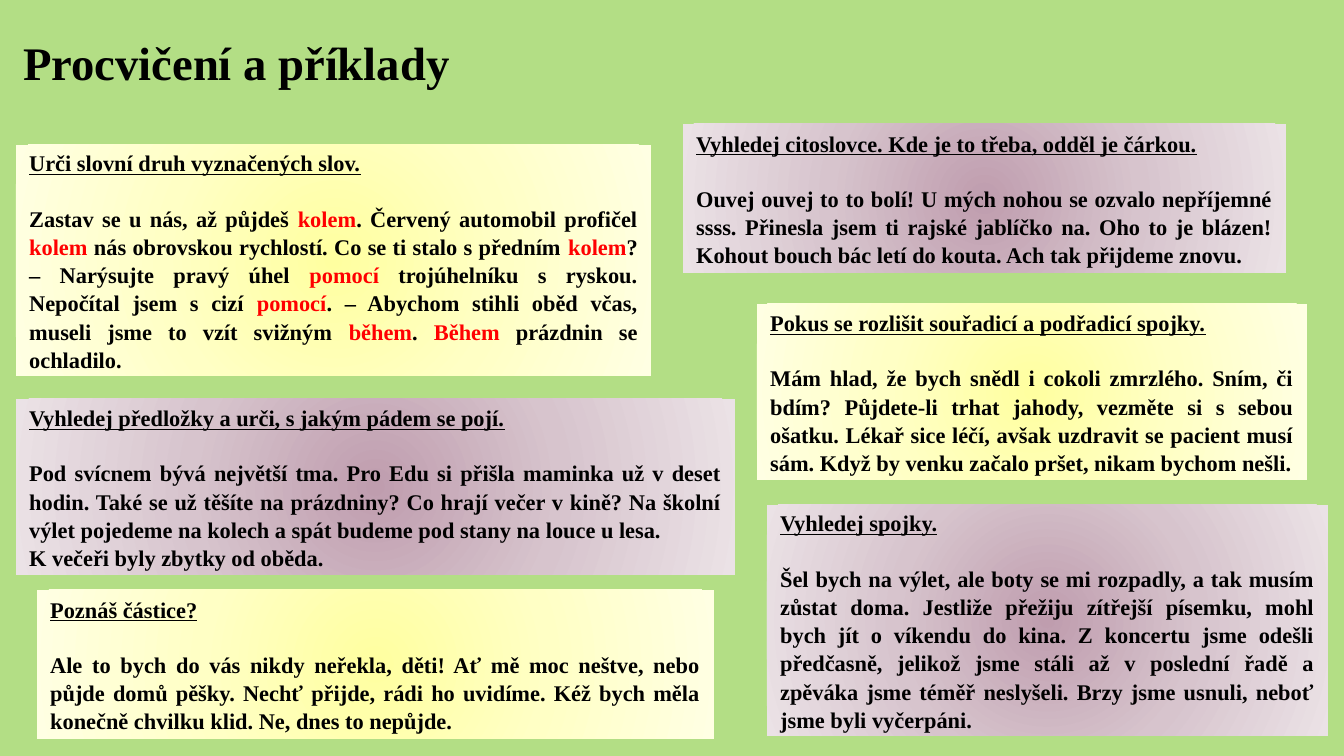
from pptx import Presentation
from pptx.dml.color import RGBColor
from pptx.enum.shapes import MSO_SHAPE
from pptx.enum.text import MSO_ANCHOR, PP_ALIGN
from pptx.oxml import parse_xml
from pptx.oxml.ns import nsdecls, qn
from pptx.util import Pt

RECT = MSO_SHAPE.RECTANGLE
MIDDLE = MSO_ANCHOR.MIDDLE
LEFT, JUSTIFY = PP_ALIGN.LEFT, PP_ALIGN.JUSTIFY

SCALE = 914400 / 134.4  # EMU per px
WIDTH, HEIGHT = 1344, 756
FONT = "Times New Roman"
LINE = 1.05
GAP = Pt(14.5)

GREEN = RGBColor(0xB3, 0xDE, 0x85)
BLACK = RGBColor(0x00, 0x00, 0x00)
RED = RGBColor(0xFF, 0x00, 0x00)
# Gradients from the centre to the edge
YELLOW = (RGBColor(0xFF, 0xFF, 0xA0), RGBColor(0xFF, 0xFF, 0xC5), RGBColor(0xFF, 0xFF, 0xE3))
MAUVE = (RGBColor(0xBF, 0x9D, 0xAE), RGBColor(0xD7, 0xC4, 0xCD), RGBColor(0xEB, 0xE2, 0xE6))

# Place, gradient, heading, body; words between asterisks are red
CARDS = [
    ((16, 145, 635, 231), YELLOW, "Urči slovní druh vyznačených slov.",
     "Zastav se u nás, až půjdeš *kolem*. Červený automobil profičel *kolem* nás "
     "obrovskou rychlostí. Co se ti stalo s předním *kolem*? – Narýsujte pravý úhel "
     "*pomocí* trojúhelníku s ryskou. Nepočítal jsem s cizí *pomocí*. – Abychom stihli "
     "oběd včas, museli jsme to vzít svižným *během*. *Během* prázdnin se ochladilo."),
    ((767, 505, 561, 231), MAUVE, "Vyhledej spojky.",
     "Šel bych na výlet, ale boty se mi rozpadly, a tak musím zůstat doma. Jestliže "
     "přežiju zítřejší písemku, mohl bych jít o víkendu do kina. Z koncertu jsme odešli "
     "předčasně, jelikož jsme stáli až v poslední řadě a zpěváka jsme téměř neslyšeli. "
     "Brzy jsme usnuli, neboť jsme byli vyčerpáni."),
    ((16, 399, 719, 176), MAUVE, "Vyhledej předložky a urči, s jakým pádem se pojí.",
     "Pod svícnem bývá největší tma. Pro Edu si přišla maminka už v deset hodin. Také se "
     "už těšíte na prázdniny? Co hrají večer v kině? Na školní výlet pojedeme na kolech "
     "a spát budeme pod stany na louce u lesa.\nK večeři byly zbytky od oběda."),
    ((757, 304, 550, 176), YELLOW, "Pokus se rozlišit souřadicí a podřadicí spojky.",
     "Mám hlad, že bych snědl i cokoli zmrzlého. Sním, či bdím? Půjdete-li trhat jahody, "
     "vezměte si s sebou ošatku. Lékař sice léčí, avšak uzdravit se pacient musí sám. "
     "Když by venku začalo pršet, nikam bychom nešli."),
    ((37, 590, 677, 149), YELLOW, "Poznáš částice?",
     "Ale to bych do vás nikdy neřekla, děti! Ať mě moc neštve, nebo půjde domů pěšky. "
     "Nechť přijde, rádi ho uvidíme. Kéž bych měla konečně chvilku klid. Ne, dnes to "
     "nepůjde."),
    ((683, 124, 603, 149), MAUVE, "Vyhledej citoslovce. Kde je to třeba, odděl je čárkou.",
     "Ouvej ouvej to to bolí! U mých nohou se ozvalo nepříjemné ssss. Přinesla jsem ti "
     "rajské jablíčko na. Oho to je blázen! Kohout bouch bác letí do kouta. Ach tak "
     "přijdeme znovu."),
]


def px(*sizes):
    return [round(size * SCALE) for size in sizes]


class Board:
    def __init__(self, slide):
        self.slide = slide
        fill = slide.background.fill
        fill.solid()
        fill.fore_color.rgb = GREEN

    def style(self, run, size, color=BLACK, line=False):
        font = run.font
        font.name, font.size, font.bold = FONT, Pt(size), True
        font.underline = line
        font.color.rgb = color

    def title(self, place, text):
        frame = self.slide.shapes.add_textbox(*px(*place)).text_frame
        frame.word_wrap = True
        frame.vertical_anchor = MIDDLE
        frame.text = text
        self.style(frame.paragraphs[0].runs[0], 25)

    def glow(self, shape, colors):
        stops = "".join(
            f'<a:gs pos="{i * 50000}"><a:srgbClr val="{color}"/></a:gs>'
            for i, color in enumerate(colors))
        grad = parse_xml(
            f'<a:gradFill {nsdecls("a")} rotWithShape="1"><a:gsLst>{stops}</a:gsLst>'
            '<a:path path="circle"><a:fillToRect l="50000" t="50000" r="50000" b="50000"/>'
            '</a:path></a:gradFill>')
        shape.fill.background()
        props = shape._element.spPr
        props.replace(props.find(qn("a:noFill")), grad)

    def card(self, place, colors, head, body):
        shape = self.slide.shapes.add_shape(RECT, *px(*place))
        shape.shadow.inherit = False
        shape.line.fill.background()
        self.glow(shape, colors)
        frame = shape.text_frame
        frame.word_wrap = True
        frame.vertical_anchor = MIDDLE

        # Heading
        para = frame.paragraphs[0]
        para.text = head
        para.alignment, para.line_spacing = LEFT, LINE
        self.style(para.runs[0], 12, line=True)

        # Body
        for row, text in enumerate(body.split("\n")):
            para = frame.add_paragraph()
            para.alignment, para.line_spacing = JUSTIFY, LINE
            para.space_before = Pt(0) if row else GAP
            for i, part in enumerate(text.split("*")):
                run = para.add_run()
                run.text = part
                self.style(run, 12, RED if i % 2 else BLACK)


def main():
    deck = Presentation()
    deck.slide_width, deck.slide_height = px(WIDTH, HEIGHT)
    board = Board(deck.slides.add_slide(deck.slide_layouts[6]))
    board.title((10, 18, 661, 88), "Procvičení a příklady")
    for card in CARDS:
        board.card(*card)
    deck.save("out.pptx")


if __name__ == "__main__":
    main()
